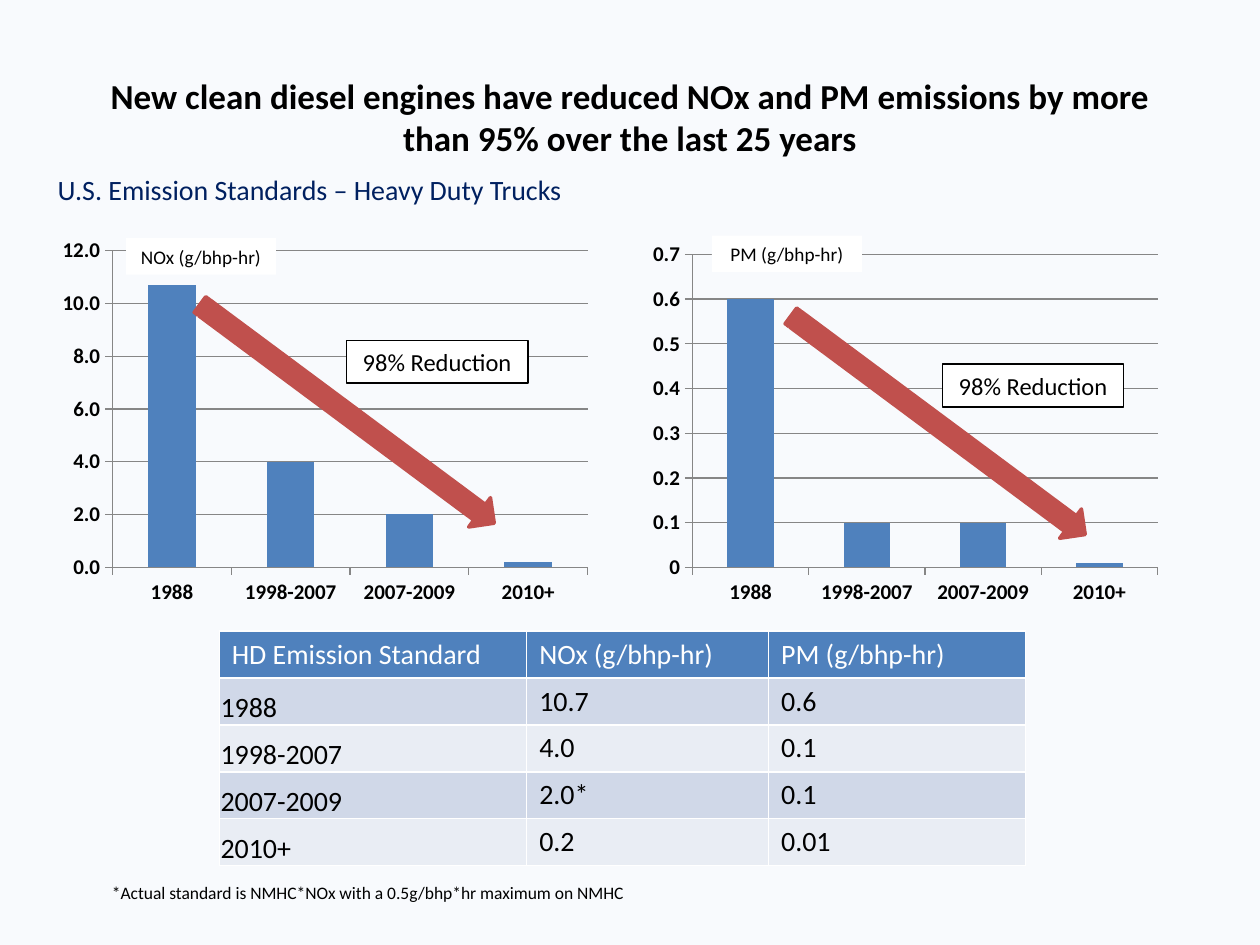
"""Build a slide on heavy duty diesel emission standards with two charts and a table."""
from pptx import Presentation
from pptx.chart.data import CategoryChartData
from pptx.dml.color import RGBColor
from pptx.enum.chart import XL_CHART_TYPE, XL_TICK_MARK
from pptx.enum.shapes import MSO_SHAPE
from pptx.enum.text import MSO_ANCHOR, PP_ALIGN
from pptx.util import Inches, Pt

THEME = {
    "font": "Calibri",
    "background": "F8FAFD", "text": "000000", "subtitle": "002060", "white": "FFFFFF",
    "bar": "4F81BD", "arrow": "C0504D", "grid": "868686",
    "bands": ("D0D8E8", "E9EDF4"),
    "size": {"title": 20, "subtitle": 16, "table": 16, "callout": 14,
             "axis": 12, "label": 11, "note": 10},
}
TITLE = ("New clean diesel engines have reduced NOx and PM emissions by more "
         "than 95% over the last 25 years")
SUBTITLE = "U.S. Emission Standards – Heavy Duty Trucks"
NOTE = "*Actual standard is NMHC*NOx with a 0.5g/bhp*hr maximum on NMHC"
CALLOUT = "98% Reduction"
PERIODS = ["1988", "1998-2007", "2007-2009", "2010+"]
PANELS = [
    {"label": "NOx (g/bhp-hr)", "values": [10.7, 4, 2, 0.2],
     "shown": ["10.7", "4.0", "2.0*", "0.2"],
     "maximum": 12, "step": 2, "format": "#,##0.0",
     "chart": (0.41, 1.83, 4.34, 3.03), "label_box": (1, 1.89, 1.19, 0.29),
     "arrow": (1.3, 3.14, 2.91, 0.29), "callout": (2.75, 2.7, 1.44, 0.34)},
    {"label": "PM (g/bhp-hr)", "values": [0.6, 0.1, 0.1, 0.01],
     "shown": ["0.6", "0.1", "0.1", "0.01"],
     "maximum": 0.7, "step": 0.1, "format": "General",
     "chart": (5.1, 1.86, 4.17, 3), "label_box": (5.65, 1.87, 1.19, 0.29),
     "arrow": (5.99, 3.23, 2.91, 0.29), "callout": (7.48, 2.7 + 0.19, 1.44, 0.34)},
]
COLUMNS = [2.44, 1.92, 2.04]
ROW_HEIGHT = 0.37


def color(value):
    return RGBColor.from_string(value)


def box(bounds):
    return [Inches(value) for value in bounds]


def apply(target, values):
    for name, value in values.items():
        setattr(target, name, value)


def format_font(font, role, tone="text", bold=False):
    apply(font, {"name": THEME["font"], "size": Pt(THEME["size"][role]), "bold": bold})
    font.color.rgb = color(THEME[tone])


def write(frame, text, role, tone="text", bold=False, align=PP_ALIGN.LEFT):
    frame.word_wrap = True
    paragraph = frame.paragraphs[0]
    paragraph.alignment = align
    run = paragraph.add_run()
    run.text = text
    format_font(run.font, role, tone, bold)


def add_text(slide, bounds, *content):
    write(slide.shapes.add_textbox(*box(bounds)).text_frame, *content)


def add_solid(slide, kind, bounds, fill, line=None, width=0.75):
    shape = slide.shapes.add_shape(kind, *box(bounds))
    shape.shadow.inherit = False
    shape.fill.solid()
    shape.fill.fore_color.rgb = color(THEME[fill])
    if line:
        shape.line.color.rgb = color(THEME[line])
        shape.line.width = Pt(width)
    else:
        shape.line.fill.background()
    return shape


def add_label(slide, bounds, text, role, line=None):
    shape = add_solid(slide, MSO_SHAPE.RECTANGLE, bounds, "white", line)
    shape.text_frame.vertical_anchor = MSO_ANCHOR.MIDDLE
    write(shape.text_frame, text, role, align=PP_ALIGN.CENTER)


def add_arrow(slide, bounds):
    arrow = add_solid(slide, MSO_SHAPE.STRIPED_RIGHT_ARROW, bounds, "arrow", "arrow", 2)
    arrow.rotation = 36.6
    arrow.adjustments[0] = 0.535


def add_bars(slide, panel):
    data = CategoryChartData()
    data.categories = PERIODS
    data.add_series("Series 1", panel["values"])
    chart = slide.shapes.add_chart(
        XL_CHART_TYPE.COLUMN_CLUSTERED, *box(panel["chart"]), data).chart
    apply(chart, {"has_title": False, "has_legend": False})
    format_font(chart.font, "axis", bold=True)
    plot = chart.plots[0]
    apply(plot, {"gap_width": 150, "vary_by_categories": False})
    fill = plot.series[0].format.fill
    fill.solid()
    fill.fore_color.rgb = color(THEME["bar"])
    value_axis = chart.value_axis
    apply(value_axis, {"minimum_scale": 0, "maximum_scale": panel["maximum"],
                       "major_unit": panel["step"], "has_major_gridlines": True})
    apply(value_axis.tick_labels, {"number_format": panel["format"],
                                   "number_format_is_linked": False})
    for axis in (chart.category_axis, value_axis):
        axis.major_tick_mark = XL_TICK_MARK.OUTSIDE
        format_font(axis.tick_labels.font, "axis", bold=True)
    for part in (chart.category_axis, value_axis, value_axis.major_gridlines):
        part.format.line.color.rgb = color(THEME["grid"])
        part.format.line.width = Pt(0.75)


def add_standards(slide):
    rows = [["HD Emission Standard"] + [panel["label"] for panel in PANELS]]
    rows += zip(PERIODS, *(panel["shown"] for panel in PANELS))
    bounds = (1.74, 5.01, sum(COLUMNS), ROW_HEIGHT * len(rows))
    table = slide.shapes.add_table(len(rows), len(COLUMNS), *box(bounds)).table
    for column, width in zip(table.columns, COLUMNS):
        column.width = Inches(width)
    for row_index, row in enumerate(rows):
        table.rows[row_index].height = Inches(ROW_HEIGHT)
        header = row_index == 0
        band = THEME["bar"] if header else THEME["bands"][(row_index - 1) % 2]
        for column_index, text in enumerate(row):
            cell = table.cell(row_index, column_index)
            cell.fill.solid()
            cell.fill.fore_color.rgb = color(band)
            write(cell.text_frame, text, "table", "white" if header else "text")
            if column_index == 0 and not header:
                apply(cell, {"vertical_anchor": MSO_ANCHOR.BOTTOM,
                             "margin_left": Inches(0.01), "margin_right": Inches(0.01),
                             "margin_top": Inches(0.01), "margin_bottom": 0})


def main():
    presentation = Presentation()
    apply(presentation, {"slide_width": Inches(10), "slide_height": Inches(7.5)})
    slide = presentation.slides.add_slide(presentation.slide_layouts[5])
    slide.background.fill.solid()
    slide.background.fill.fore_color.rgb = color(THEME["background"])

    title = slide.shapes.title
    apply(title, dict(zip(("left", "top", "width", "height"), box((0.5, 0.3, 9, 1.25)))))
    title.text_frame.vertical_anchor = MSO_ANCHOR.MIDDLE
    write(title.text_frame, TITLE, "title", bold=True, align=PP_ALIGN.CENTER)

    add_standards(slide)
    add_text(slide, (0.79, 6.95, 5.63, 0.27), NOTE, "note")
    add_text(slide, (0.36, 1.32, 6.51, 0.37), SUBTITLE, "subtitle", "subtitle")
    for panel in PANELS:
        add_bars(slide, panel)
        add_arrow(slide, panel["arrow"])
        add_label(slide, panel["callout"], CALLOUT, "callout", "text")
        add_label(slide, panel["label_box"], panel["label"], "label")
    presentation.save("out.pptx")


if __name__ == "__main__":
    main()
